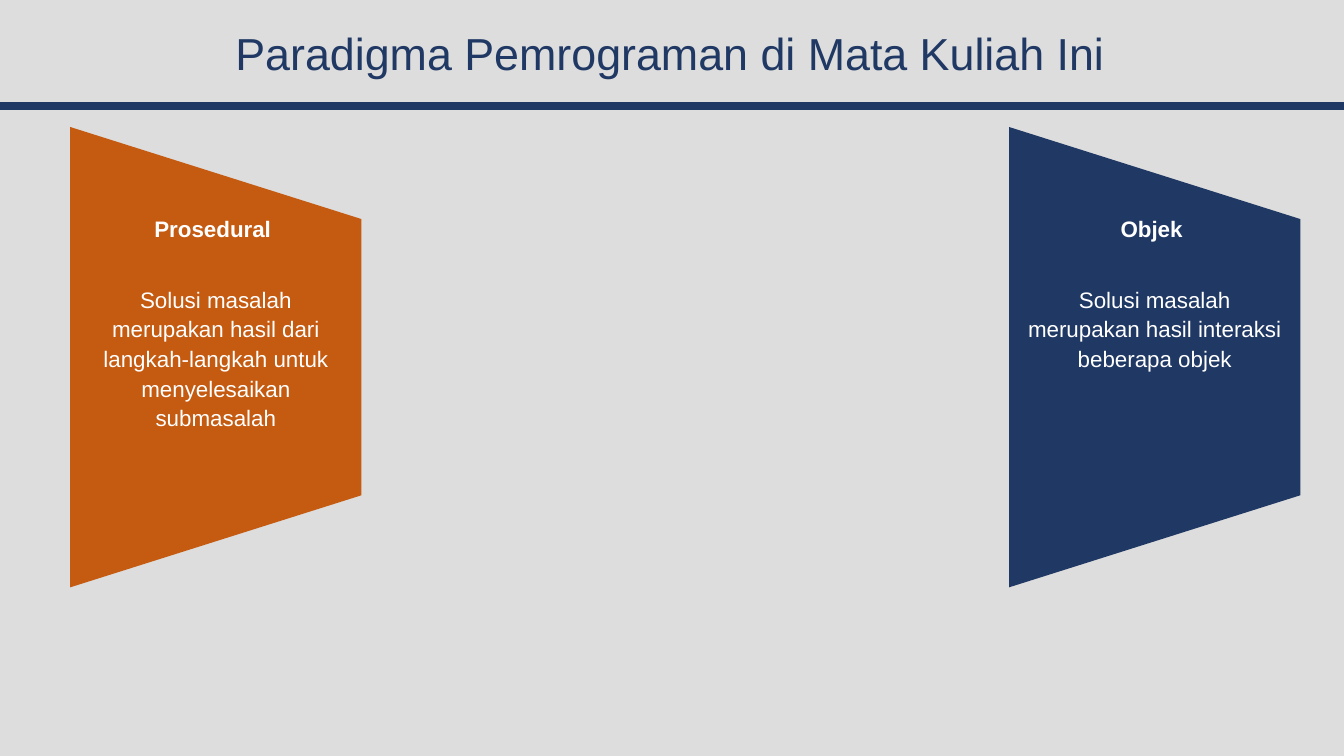
from dataclasses import dataclass
from typing import Any

from lxml.etree import SubElement as SubElem
from pptx import Presentation as Deck
from pptx.dml.color import RGBColor as Rgb
from pptx.enum.shapes import MSO_CONNECTOR as Link, MSO_SHAPE as Form
from pptx.enum.text import MSO_ANCHOR as Anchor, MSO_AUTO_SIZE as Fit, PP_ALIGN as Align
from pptx.oxml.ns import qn
from pptx.util import Cm, Pt


@dataclass(frozen=True)
class Theme:
    back: Rgb = Rgb(0xDD, 0xDD, 0xDD)
    navy: Rgb = Rgb(0x20, 0x38, 0x64)
    rust: Rgb = Rgb(0xC5, 0x5A, 0x11)
    white: Rgb = Rgb(0xFF, 0xFF, 0xFF)
    face: str = "Arial"
    title: Pt = Pt(32)
    text: Pt = Pt(16)
    rule: Pt = Pt(6)


@dataclass(frozen=True)
class Panel:
    left: float
    fill: Rgb
    head: str
    body: str


LOOK = Theme()
WIDE, TALL = 7.34, 11.6
MID = 9.0
TEXT_TOP, TEXT_TALL = 5.51, 6.96
PANELS = (
    Panel(1.77, LOOK.rust, "Prosedural ",
          "Solusi masalah merupakan hasil dari langkah-langkah untuk menyelesaikan submasalah"),
    Panel(25.43, LOOK.navy, "Objek ",
          "Solusi masalah merupakan hasil interaksi beberapa objek"),
)


def apply(item: Any, **form: Any) -> None:
    for key, value in form.items():
        setattr(item, key, value)


def write(para: Any, text: str, size: Pt, tint: Rgb, bold: bool, **form: Any) -> None:
    apply(para, alignment=Align.CENTER, **form)
    run = para.add_run()
    run.text = text
    apply(run.font, name=LOOK.face, size=size, bold=bold)
    run.font.color.rgb = tint


def draw_rule(slide: Any) -> None:
    rule = slide.shapes.add_connector(Link.STRAIGHT, 0, Cm(2.67), Cm(34.04), Cm(2.67))
    rule.line.color.rgb = LOOK.navy
    rule.line.width = LOOK.rule
    SubElem(rule._element.spPr, qn("a:effectLst"))


def draw_title(slide: Any, text: str) -> None:
    title = slide.shapes.title
    apply(title, left=Cm(1.02), top=Cm(0.51), width=Cm(31.75), height=Cm(1.78))
    frame = title.text_frame
    apply(frame, vertical_anchor=Anchor.MIDDLE, word_wrap=True, auto_size=Fit.NONE)
    write(frame.paragraphs[0], text, LOOK.title, LOOK.navy, False, line_spacing=0.9)


def draw_panel(slide: Any, panel: Panel) -> None:
    shape = slide.shapes.add_shape(
        Form.FLOWCHART_MANUAL_OPERATION,
        Cm(panel.left + (WIDE - TALL) / 2), Cm(MID - WIDE / 2), Cm(TALL), Cm(WIDE))
    shape.rotation = 270
    shape.shadow.inherit = False
    shape.fill.solid()
    shape.fill.fore_color.rgb = panel.fill
    shape.line.fill.background()

    box = slide.shapes.add_textbox(Cm(panel.left), Cm(TEXT_TOP), Cm(WIDE), Cm(TEXT_TALL))
    frame = box.text_frame
    apply(frame, word_wrap=True, vertical_anchor=Anchor.TOP,
          margin_left=Cm(0.28), margin_right=Cm(0.28), margin_top=0, margin_bottom=0)
    write(frame.paragraphs[0], panel.head, LOOK.text, LOOK.white, True,
          line_spacing=0.9, space_after=Pt(29))
    write(frame.add_paragraph(), panel.body, LOOK.text, LOOK.white, False,
          line_spacing=1.1)


def main() -> None:
    deck = Deck()
    apply(deck, slide_width=Cm(33.87), slide_height=Cm(19.05))
    slide = deck.slides.add_slide(deck.slide_layouts[5])
    slide.background.fill.solid()
    slide.background.fill.fore_color.rgb = LOOK.back
    draw_rule(slide)
    draw_title(slide, "Paradigma Pemrograman di Mata Kuliah Ini")
    for panel in PANELS:
        draw_panel(slide, panel)
    deck.save("out.pptx")


if __name__ == "__main__":
    main()
